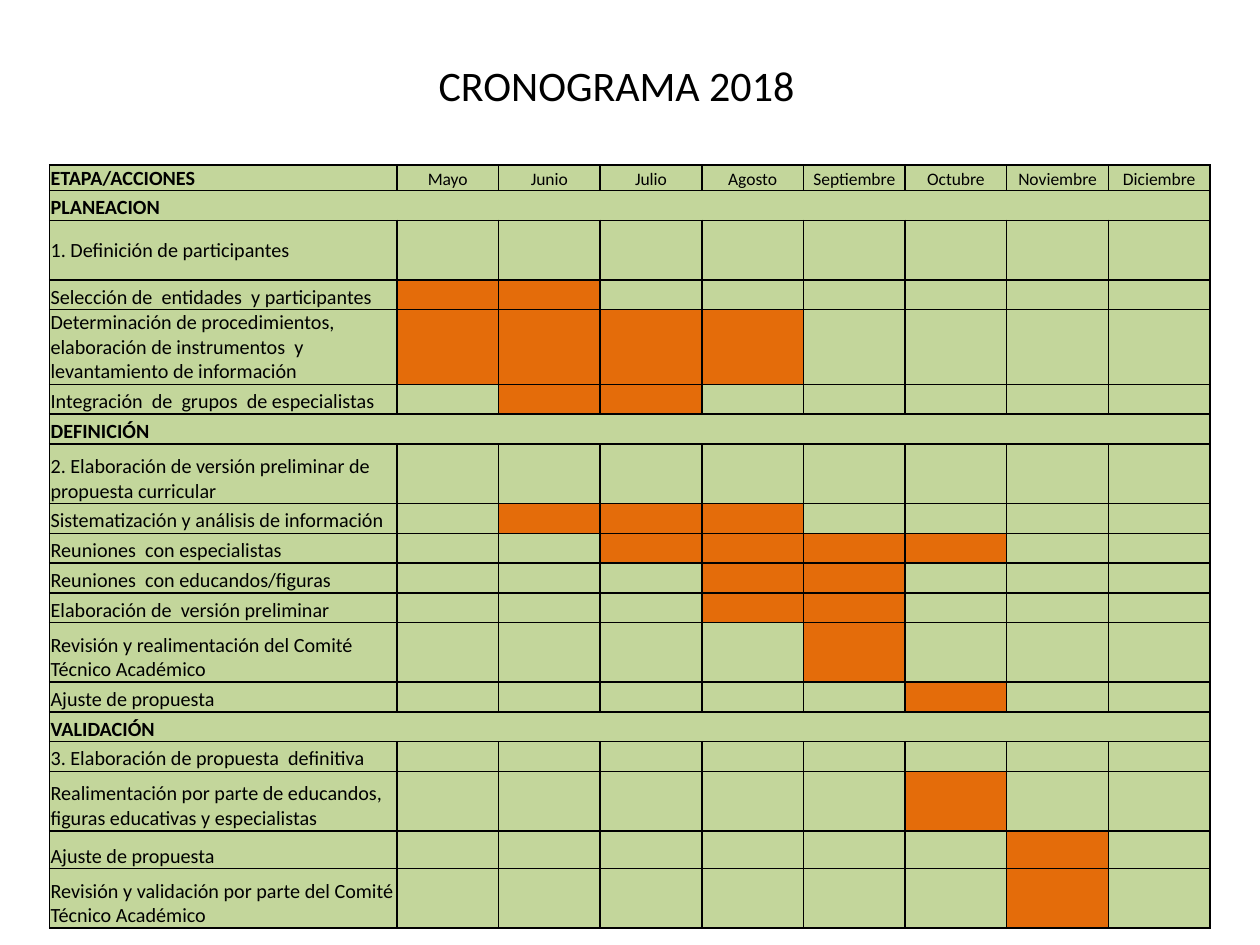
from lxml.etree import SubElement
from pptx import Presentation
from pptx.dml.color import RGBColor
from pptx.enum.text import MSO_ANCHOR as Anchor, PP_ALIGN as Align
from pptx.oxml.ns import qn
from pptx.util import Cm, Pt

BLACK = RGBColor(0x00, 0x00, 0x00)
GREEN = RGBColor(0xC3, 0xD6, 0x9B)
ORANGE = RGBColor(0xE4, 0x6C, 0x0A)

MONTHS = ["Mayo", "Junio", "Julio", "Agosto", "Septiembre", "Octubre", "Noviembre", "Diciembre"]
ACTIONS = [
    ("PLANEACION", 0.6, None),
    ("1. Definición de participantes", 1.2, []),
    ("Selección de  entidades  y participantes", 0.6, ["Mayo", "Junio"]),
    ("Determinación de procedimientos, elaboración de instrumentos  y levantamiento de información",
     1.51, ["Mayo", "Junio", "Julio", "Agosto"]),
    ("Integración  de  grupos  de especialistas", 0.6, ["Junio", "Julio"]),
    ("DEFINICIÓN", 0.6, None),
    ("2. Elaboración de versión preliminar de propuesta curricular", 1.2, []),
    ("Sistematización y análisis de información", 0.6, ["Junio", "Julio", "Agosto"]),
    ("Reuniones  con especialistas", 0.6, ["Julio", "Agosto", "Septiembre", "Octubre"]),
    ("Reuniones  con educandos/figuras", 0.6, ["Agosto", "Septiembre"]),
    ("Elaboración de  versión preliminar", 0.6, ["Agosto", "Septiembre"]),
    ("Revisión y realimentación del Comité Técnico Académico", 1.2, ["Septiembre"]),
    ("Ajuste de propuesta", 0.6, ["Octubre"]),
    ("VALIDACIÓN", 0.6, None),
    ("3. Elaboración de propuesta  definitiva", 0.6, []),
    ("Realimentación por parte de educandos, figuras educativas y especialistas", 1.2, ["Octubre"]),
    ("Ajuste de propuesta", 0.76, ["Noviembre"]),
    ("Revisión y validación por parte del Comité Técnico Académico", 1.2, ["Noviembre"]),
]


def write(paragraph, text, size, bold=False, align=Align.LEFT):
    paragraph.text = text
    paragraph.alignment = align
    paragraph.font.size = Pt(size)
    for run in paragraph.runs:
        run.font.name = "Calibri"
        run.font.size = Pt(size)
        run.font.bold = bold
        run.font.color.rgb = BLACK


def style(cell, color):
    cell.margin_left = cell.margin_right = cell.margin_top = Cm(0.02)
    cell.margin_bottom = 0
    cell.vertical_anchor = Anchor.BOTTOM
    properties = cell._tc.get_or_add_tcPr()
    for side in ("a:lnL", "a:lnR", "a:lnT", "a:lnB"):
        border = SubElement(properties, qn(side), w=str(Pt(1)))
        SubElement(SubElement(border, qn("a:solidFill")), qn("a:srgbClr"), val=str(BLACK))
    cell.fill.solid()
    cell.fill.fore_color.rgb = color


prs = Presentation()
prs.slide_width = Cm(25.4)
prs.slide_height = Cm(19.05)
slide = prs.slides.add_slide(prs.slide_layouts[6])

title = slide.shapes.add_textbox(Cm(1), Cm(0.9), Cm(22.86), Cm(1.6)).text_frame
title.word_wrap = True
title.vertical_anchor = Anchor.MIDDLE
write(title.paragraphs[0], "CRONOGRAMA 2018", 24, align=Align.CENTER)

schedule = slide.shapes.add_table(
    len(ACTIONS) + 1, len(MONTHS) + 1, Cm(1), Cm(3.33), Cm(23.4), Cm(15.38)).table
schedule.columns[0].width = Cm(7)
schedule.rows[0].height = Cm(0.51)

heading = schedule.cell(0, 0)
style(heading, GREEN)
write(heading.text_frame.paragraphs[0], "ETAPA/ACCIONES", 11.5, bold=True)
for column, month in enumerate(MONTHS, 1):
    schedule.columns[column].width = Cm(2.05)
    month_cell = schedule.cell(0, column)
    style(month_cell, GREEN)
    write(month_cell.text_frame.paragraphs[0], month, 10, align=Align.CENTER)

for row, (action, height, active_months) in enumerate(ACTIONS, 1):
    is_stage = active_months is None
    schedule.rows[row].height = Cm(height)
    action_cell = schedule.cell(row, 0)
    style(action_cell, GREEN)
    write(action_cell.text_frame.paragraphs[0], action, 11.5, bold=is_stage)
    for column, month in enumerate(MONTHS, 1):
        period = schedule.cell(row, column)
        style(period, ORANGE if month in (active_months or []) else GREEN)
        period.text_frame.paragraphs[0].font.size = Pt(10)
    if is_stage:
        action_cell.merge(schedule.cell(row, len(MONTHS)))

schedule.cell(2, 0).vertical_anchor = Anchor.MIDDLE

prs.save("out.pptx")
